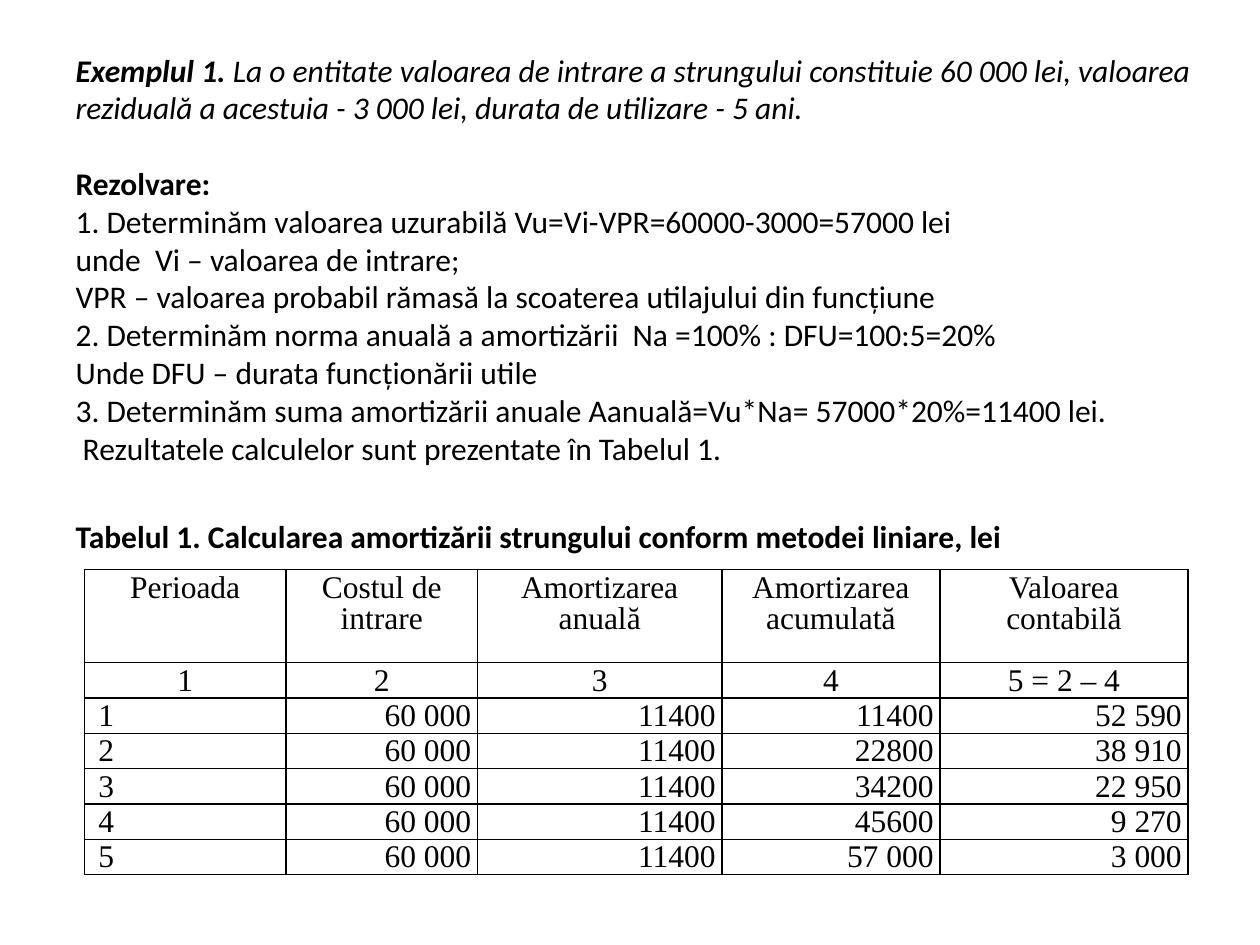
"""Build a slide with a straight-line depreciation example and its table."""
from dataclasses import dataclass

import pptx
import pptx.dml.color
import pptx.enum.text
import pptx.oxml
import pptx.oxml.ns
import pptx.util
from pptx.util import Inches

BLACK = pptx.dml.color.RGBColor(0, 0, 0)
ALIGN = pptx.enum.text.PP_ALIGN
FONT_SIZE = pptx.util.Pt(18)
COLUMN_WIDTHS = (1.6, 1.52, 1.94, 1.73, 1.97)
HEADER_HEIGHT = 0.74
ROW_HEIGHT = 0.28


@dataclass(frozen=True)
class Line:
    text: str
    bold: bool = False
    italic: bool = False
    lead: str = ""
    gap: float = 0


LINES = (
    Line(
        " La o entitate valoarea de intrare a strungului constituie 60 000 lei, "
        "valoarea reziduală a acestuia - 3 000 lei, durata de utilizare - 5 ani.",
        italic=True,
        lead="Exemplul 1.",
    ),
    Line("Rezolvare:", bold=True, gap=21.6),
    Line("1. Determinăm valoarea uzurabilă Vu=Vi-VPR=60000-3000=57000 lei"),
    Line("unde  Vi – valoarea de intrare;"),
    Line("VPR – valoarea probabil rămasă la scoaterea utilajului din funcțiune"),
    Line("2. Determinăm norma anuală a amortizării  Na =100% : DFU=100:5=20%"),
    Line("Unde DFU – durata funcționării utile"),
    Line("3. Determinăm suma amortizării anuale Aanuală=Vu*Na= 57000*20%=11400 lei."),
    Line(" Rezultatele calculelor sunt prezentate în Tabelul 1."),
    Line(
        "Tabelul 1. Calcularea amortizării strungului conform metodei liniare, lei",
        bold=True,
        gap=28.7,
    ),
)

ROWS = (
    ("Perioada", "Costul de intrare", "Amortizarea anuală",
     "Amortizarea acumulată", "Valoarea\ncontabilă"),
    ("1", "2", "3", "4", "5 = 2 – 4"),
    ("1", "60 000", "11400", "11400", "52 590"),
    ("2", "60 000", "11400", "22800", "38 910"),
    ("3", "60 000", "11400", "34200", "22 950"),
    ("4", "60 000", "11400", "45600", "9 270"),
    ("5", "60 000", "11400", "57 000", "3 000"),
)


def set_font(font, name: str) -> None:
    font.name = name
    font.size = FONT_SIZE
    font.color.rgb = BLACK


def write_title(box) -> None:
    box.left, box.top, box.width, box.height = map(Inches, (0.5, 1.42, 9.5, 3))
    frame = box.text_frame
    frame.word_wrap = True
    frame.auto_size = pptx.enum.text.MSO_AUTO_SIZE.NONE
    frame.vertical_anchor = pptx.enum.text.MSO_ANCHOR.BOTTOM
    frame.margin_bottom = Inches(0.02)
    for index, line in enumerate(LINES):
        para = frame.add_paragraph() if index else frame.paragraphs[0]
        para.alignment = ALIGN.LEFT
        para.space_before = pptx.util.Pt(line.gap)
        set_font(para.font, "Calibri")
        para.font.bold = line.bold
        para.font.italic = line.italic
        if line.lead:
            span = para.add_run()
            span.text = line.lead
            span.font.bold = True
        para.add_run().text = line.text


def add_borders(cell) -> None:
    properties = cell._tc.get_or_add_tcPr()
    for position, side in enumerate(("lnL", "lnR", "lnT", "lnB")):
        border = pptx.oxml.parse_xml(
            f'<a:{side} {pptx.oxml.ns.nsdecls("a")} w="12700"><a:solidFill>'
            f'<a:srgbClr val="{BLACK}"/></a:solidFill></a:{side}>'
        )
        properties.insert(position, border)


def write_cell(cell, text: str, alignment, left: float, right: float) -> None:
    cell.fill.background()
    cell.margin_left, cell.margin_right = Inches(left), Inches(right)
    cell.margin_top, cell.margin_bottom = Inches(0.03), 0
    cell.text_frame.text = text
    for para in cell.text_frame.paragraphs:
        para.alignment = alignment
        para.line_spacing = FONT_SIZE
        set_font(para.font, "Times New Roman")
    add_borders(cell)


def add_depreciation_table(page) -> None:
    heights = [HEADER_HEIGHT] + [ROW_HEIGHT] * (len(ROWS) - 1)
    table = page.shapes.add_table(
        len(ROWS), len(COLUMN_WIDTHS), Inches(0.67), Inches(4.52),
        Inches(sum(COLUMN_WIDTHS)), Inches(sum(heights)),
    ).table
    table.first_row = False
    table.horz_banding = False
    for column, width in zip(table.columns, COLUMN_WIDTHS):
        column.width = Inches(width)
    for row, height in zip(table.rows, heights):
        row.height = Inches(height)
    for row_index, values in enumerate(ROWS):
        for column_index, text in enumerate(values):
            if row_index < 2:
                layout = (ALIGN.CENTER, 0.01, 0.01)
            elif column_index == 0:
                layout = (ALIGN.LEFT, 0.11, 0.01)
            else:
                layout = (ALIGN.RIGHT, 0.01, 0.05)
            write_cell(table.cell(row_index, column_index), text, *layout)


def main() -> None:
    deck = pptx.Presentation()
    deck.slide_width, deck.slide_height = Inches(10), Inches(7.5)
    page = deck.slides.add_slide(deck.slide_layouts[5])
    write_title(page.shapes.title)
    add_depreciation_table(page)
    deck.save("out.pptx")


if __name__ == "__main__":
    main()
